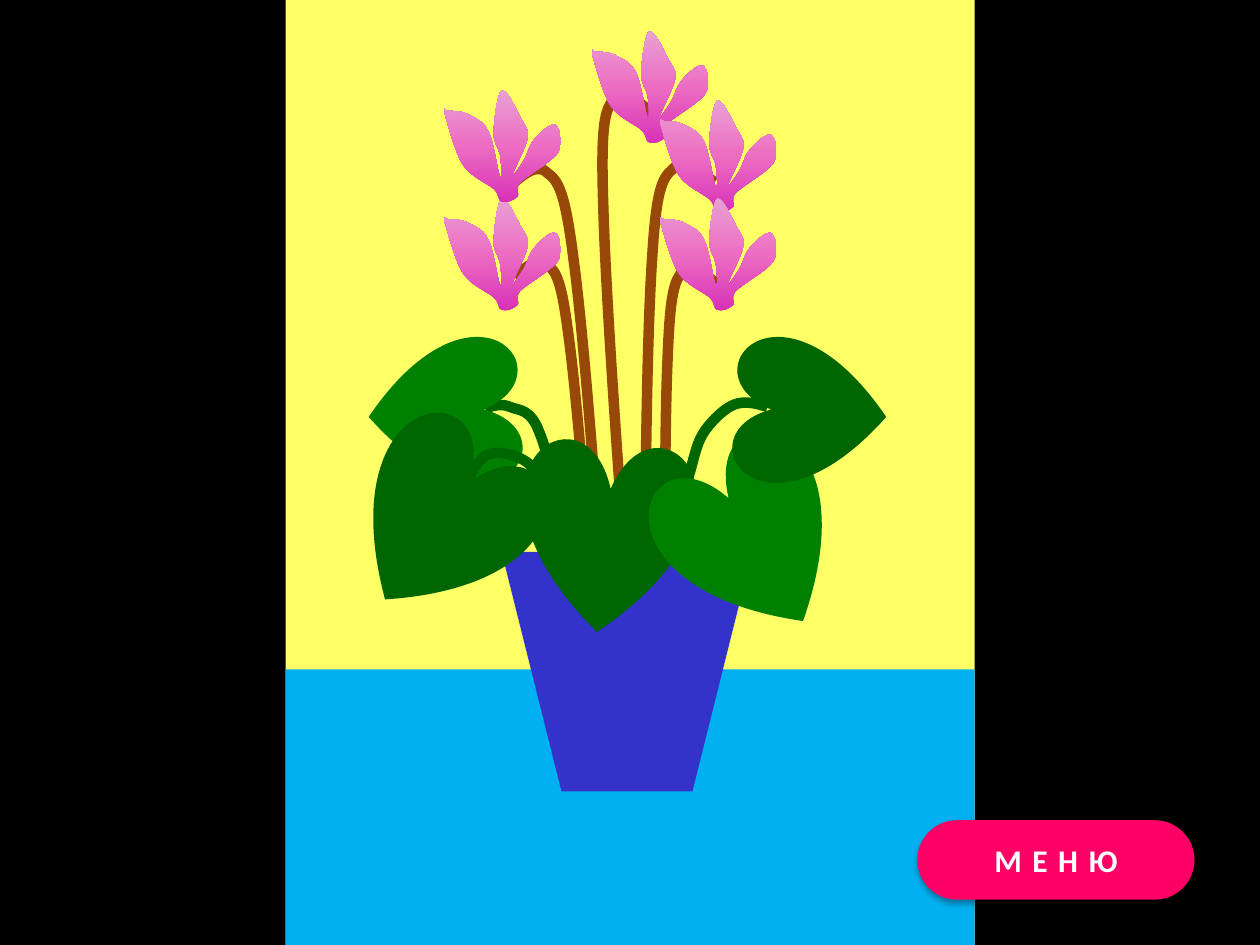
from lxml.etree import SubElement
from pptx import Presentation
from pptx.dml.color import RGBColor
from pptx.enum.shapes import MSO_SHAPE
from pptx.enum.text import MSO_ANCHOR, PP_ALIGN
from pptx.oxml import parse_xml
from pptx.oxml.ns import nsdecls, qn
from pptx.util import Pt

DARK_GREEN, GREEN, BROWN = "006600", "008000", "984807"
PETAL_STOPS = [(0, "D72FB7"), (50, "ED6DC2"), (100, "E8A2D4")]
STEM = [(1, 1), (.91, .7), (.81, .41), (.72, .25), (.63, .08),
        (.56, .05), (.44, .03), (.32, 0), (.16, .04), (0, .07)]
STEMS = [
    (289.4, 92.2, 53.3, 223.2, 0, False),
    (361.4, 90, 53.3, 223.2, 356.3, True),
    (293.8, 146.2, 42.5, 168.5, 0, False),
    (339.8, 48.2, 48.2, 270, 352.7, True),
    (373, 148.3, 43.2, 223.2, 356.3, True),
]
BACK_STALK = [
    (277.2, 233.3), (282.2, 231.8), (286.6, 230.4), (291.6, 232.6), (296.6, 234.7),
    (303.1, 233.3), (308.2, 247), (313.9, 260.6), (319, 288), (324, 315.4)]
FRONT_STALK = [
    (267.1, 275), (270, 268.6), (273.6, 262.1), (278.6, 259.9), (283, 257.8),
    (289.4, 259.2), (294.5, 260.6), (298.8, 262.8), (302.4, 263.5), (306.7, 270.7),
    (310.3, 277.2), (316.1, 293), (319, 303.1), (321.8, 312.5), (322.6, 319.7),
    (323.3, 327.6)]
RIGHT_STALK = [
    (438.5, 232.6), (432, 230.4), (425.5, 229), (419.8, 231.1), (414, 233.3),
    (407.5, 239.8), (403.2, 245.5), (398.9, 252), (398.2, 254.9), (394.6, 268.6),
    (390.2, 282.2), (380.2, 327.6), (380.2, 327.6)]
FLOWER = [
    (28.8, 57.6), (24.5, 54), (15.1, 50.4), (10.8, 43.2), (6.5, 36), (2.2, 19.4),
    (0.7, 14.4), (0, 9.4), (0.7, 13), (2.9, 13), (5, 13), (9.4, 13), (13, 14.4),
    (16.6, 16.6), (22.3, 18), (25.2, 23.8), (28.8, 29.5), (31, 48.2), (32.4, 50.4),
    (33.8, 52.6), (33.1, 42.5), (32.4, 38.2), (31.7, 33.8), (28.1, 31), (28.8, 24.5),
    (28.8, 18.7), (31, 2.9), (33.1, 1.4), (36, 0), (41, 10.8), (43.2, 15.1),
    (45.4, 20.2), (49, 22.3), (48.2, 28.1), (47.5, 33.8), (39.6, 47.5), (39.6, 49.7),
    (38.9, 51.8), (43.9, 44.6), (46.1, 41), (48.2, 37.4), (49, 32.4), (51.8, 29.5),
    (54.7, 25.9), (61.2, 19.4), (64.1, 20.9), (66.2, 22.3), (69.1, 31), (65.5, 36.7),
    (62.6, 41.8), (48.2, 49.7), (43.9, 54), (40.3, 58.3), (43.9, 60.5), (42.5, 61.9),
    (40.3, 64.1), (36, 66.2), (33.1, 64.8), (31, 64.1), (32.4, 61.2), (28.8, 57.6)]
FLOWERS = [(253.4, 112.3), (253.4, 50.4), (337.7, 16.6), (376.6, 56.2), (376.6, 112.3)]


def rgb(color):
    """Turn a hex string into a colour."""
    return RGBColor.from_string(color)


def add_preset(slide, kind, x, y, w, h, color, rotation=0):
    """Add a plain filled preset shape."""
    sp = slide.shapes.add_shape(kind, Pt(x), Pt(y), Pt(w), Pt(h))
    sp.fill.solid()
    sp.fill.fore_color.rgb = rgb(color)
    sp.line.fill.background()
    sp.shadow.inherit = False
    sp.rotation = rotation
    return sp


def add_curve(slide, points, closed=False):
    """Add a freeform whose points after the first form cubic curves."""
    start, *rest = [(Pt(x), Pt(y)) for x, y in points]
    builder = slide.shapes.build_freeform(*start)
    builder.add_line_segments(rest, close=closed)
    sp = builder.convert_to_shape()
    sp.shadow.inherit = False
    geometry = next(sp._element.iter(qn("a:path")))
    segments = geometry.findall(qn("a:lnTo"))
    for i in range(0, len(segments), 3):
        curve = SubElement(geometry, qn("a:cubicBezTo"))
        segments[i].addprevious(curve)
        for segment in segments[i:i + 3]:
            curve.append(segment[0])
            geometry.remove(segment)
    return sp


def add_stroke(slide, points, color, rotation=0):
    """Add an open thick curve."""
    sp = add_curve(slide, points)
    sp.fill.background()
    sp.line.color.rgb = rgb(color)
    sp.line.width = Pt(6)
    sp.rotation = rotation


def add_stem(slide, x, y, w, h, rotation, mirrored):
    """Fit the common stem curve into a box."""
    points = [(x + w * (1 - u if mirrored else u), y + h * v) for u, v in STEM]
    add_stroke(slide, points, BROWN, rotation)


def add_flower(slide, x, y):
    """Add a flower shaded from its base upwards."""
    sp = add_curve(slide, [(x + dx, y + dy) for dx, dy in FLOWER], closed=True)
    sp.line.fill.background()
    stops = "".join(f'<a:gs pos="{pos * 1000}"><a:srgbClr val="{color}"/></a:gs>'
                    for pos, color in PETAL_STOPS)
    gradient = parse_xml(f'<a:gradFill {nsdecls("a")}><a:gsLst>{stops}</a:gsLst>'
                         '<a:lin ang="16200000" scaled="0"/></a:gradFill>')
    sp._element.spPr.find(qn("a:custGeom")).addnext(gradient)


def add_leaf(slide, x, y, w, h, color, rotation):
    """Add a heart-shaped leaf."""
    add_preset(slide, MSO_SHAPE.HEART, x, y, w, h, color, rotation)


def add_pot(slide):
    """Add the pot, wide side up."""
    sp = add_preset(slide, MSO_SHAPE.TRAPEZOID, 286.6, 315.4, 143.3, 136.8, "3333CC")
    sp._element.spPr.find(qn("a:xfrm")).set("flipV", "1")


def add_shadow(sp):
    """Give a shape a soft shadow below it."""
    effects = sp._element.spPr.find(qn("a:effectLst"))
    effects.append(parse_xml(
        f'<a:outerShdw {nsdecls("a")} blurRad="{Pt(3.5)}" dist="{Pt(2.2)}" dir="5400000" '
        'rotWithShape="0"><a:srgbClr val="000000"><a:alpha val="32000"/></a:srgbClr>'
        '</a:outerShdw>'))


def set_text(sp, text, font="Calibri", size=18, color="FFFFFF", bold=True, spacing=0):
    """Write one centred line into a shape."""
    tf = sp.text_frame
    tf.vertical_anchor = MSO_ANCHOR.MIDDLE
    p = tf.paragraphs[0]
    p.alignment = PP_ALIGN.CENTER
    r = p.add_run()
    r.text = text
    r.font.name = font
    r.font.size = Pt(size)
    r.font.bold = bold
    r.font.color.rgb = rgb(color)
    r._r.get_or_add_rPr().set("spc", str(spacing * 100))


def add_button(slide):
    """Add the menu button."""
    sp = add_preset(slide, MSO_SHAPE.ROUNDED_RECTANGLE, 524.2, 468.7, 158.4, 45.4, "FF0066")
    sp.adjustments[0] = 0.5
    add_shadow(sp)
    set_text(sp, "МЕНЮ", spacing=6)


def main():
    """Build the slide and save it."""
    prs = Presentation()
    prs.slide_width, prs.slide_height = Pt(720), Pt(540)
    slide = prs.slides.add_slide(prs.slide_layouts[6])
    slide.background.fill.solid()
    slide.background.fill.fore_color.rgb = rgb("000000")
    add_preset(slide, MSO_SHAPE.RECTANGLE, 163.2, 0, 393.8, 540, "FFFF66")
    add_preset(slide, MSO_SHAPE.RECTANGLE, 163.2, 382.5, 393.8, 157.5, "00B0F0")
    add_stroke(slide, BACK_STALK, DARK_GREEN)
    add_leaf(slide, 213.1, 191.5, 82.8, 87.8, GREEN, 86.3)
    for stalk in (FRONT_STALK, RIGHT_STALK):
        add_stroke(slide, stalk, DARK_GREEN)
    for stem in STEMS:
        add_stem(slide, *stem)
    add_pot(slide)
    add_leaf(slide, 297.4, 252, 97.9, 109.4, DARK_GREEN, 5.5)
    add_leaf(slide, 381.6, 253.4, 97.9, 109.4, GREEN, 328.8)
    add_leaf(slide, 421.2, 191.5, 82.8, 87.8, DARK_GREEN, 273.7)
    add_leaf(slide, 203, 243.4, 97.9, 109.4, DARK_GREEN, 35.7)
    for x, y in FLOWERS:
        add_flower(slide, x, y)
    add_button(slide)
    prs.save("out.pptx")


if __name__ == "__main__":
    main()
